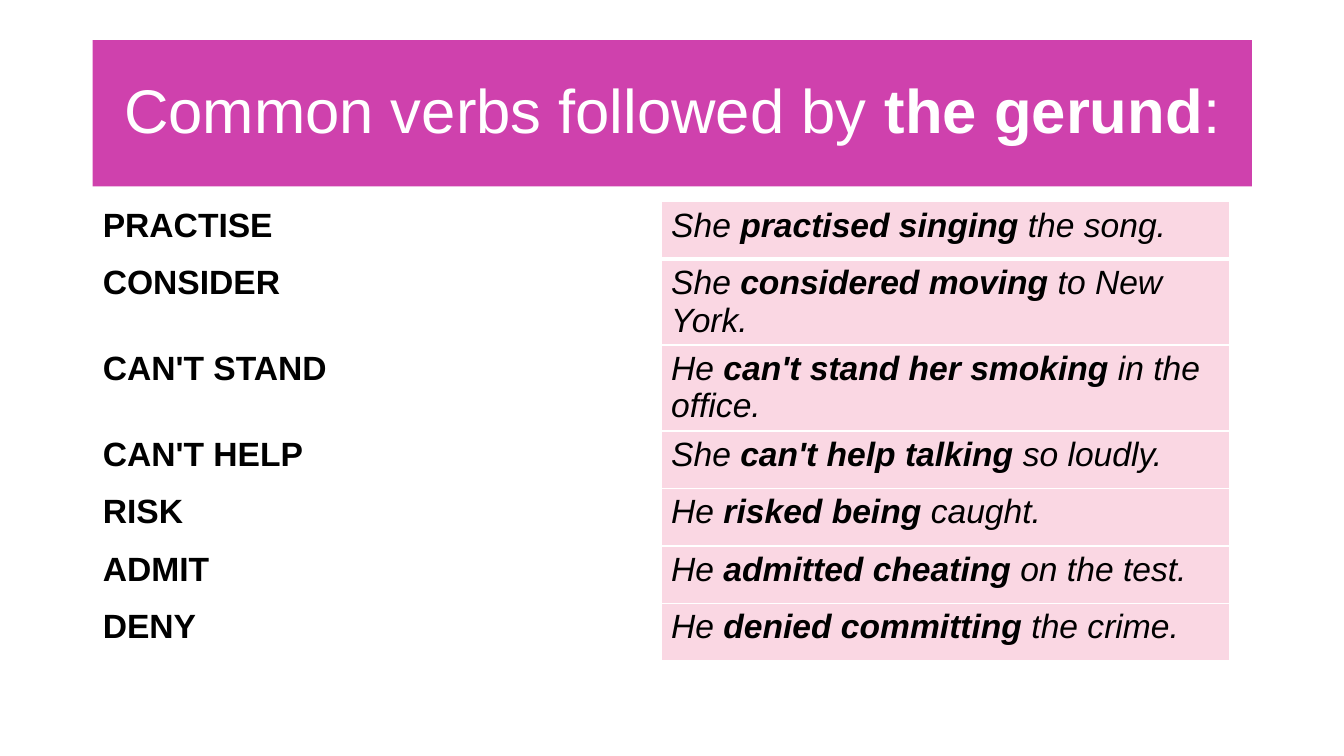
from lxml.etree import SubElement
from pptx import Presentation
from pptx.dml.color import RGBColor
from pptx.enum.shapes import MSO_SHAPE
from pptx.enum.text import MSO_ANCHOR, PP_ALIGN
from pptx.oxml.ns import qn
from pptx.util import Pt

MAGENTA = RGBColor(0xCF, 0x41, 0xAD)
PINK = RGBColor(0xFA, 0xD7, 0xE3)
WHITE = RGBColor(0xFF, 0xFF, 0xFF)
BLACK = RGBColor(0x00, 0x00, 0x00)

LEFT = 66.24
ONE_LINE, TWO_LINES = 41.1, 61.4

VERBS = [
    ("PRACTISE", "She ", "practised singing ", "the song.", ONE_LINE),
    ("CONSIDER", "She ", "considered moving ", "to New York.", TWO_LINES),
    ("CAN'T STAND", "He ", "can't stand her smoking ", "in the office.", TWO_LINES),
    ("CAN'T HELP", "She ", "can't help talking ", "so loudly.", ONE_LINE),
    ("RISK", "He ", "risked being ", "caught.", ONE_LINE),
    ("ADMIT", "He ", "admitted cheating ", "on the test.", ONE_LINE),
    ("DENY", "He ", "denied committing ", "the crime.", ONE_LINE),
]


class GerundSlide:
    """Holds the text style and the slide that receives each element."""

    font_name = "Arial"

    def __init__(self, deck):
        self.slide = deck.slides.add_slide(deck.slide_layouts[6])

    def add_spans(self, paragraph, spans, size, color, italic=False):
        font = paragraph.font
        font.name, font.size, font.italic = self.font_name, Pt(size), italic
        font.color.rgb = color
        for text, bold in spans:
            span = paragraph.add_run()
            span.text = text
            span.font.bold = bold

    def banner(self, left, top, width, height, spans):
        box = self.slide.shapes.add_shape(
            MSO_SHAPE.RECTANGLE, Pt(left), Pt(top), Pt(width), Pt(height))
        box.shadow.inherit = False
        box.fill.solid()
        box.fill.fore_color.rgb = MAGENTA
        box.line.fill.background()
        box.text_frame.word_wrap = True
        box.text_frame.vertical_anchor = MSO_ANCHOR.MIDDLE
        paragraph = box.text_frame.paragraphs[0]
        paragraph.alignment = PP_ALIGN.CENTER
        paragraph.line_spacing = 0.9
        self.add_spans(paragraph, spans, 44, WHITE)

    def cell(self, cell, spans, fill, bottom_border, italic=False):
        properties = cell._tc.get_or_add_tcPr()
        for side, width in (("L", 1), ("R", 1), ("T", 1), ("B", bottom_border)):
            line = SubElement(properties, qn(f"a:ln{side}"), w=str(Pt(width)))
            paint = SubElement(line, qn("a:solidFill"))
            SubElement(paint, qn("a:srgbClr"), val=str(WHITE))
        cell.fill.solid()
        cell.fill.fore_color.rgb = fill
        self.add_spans(cell.text_frame.paragraphs[0], spans, 24, BLACK, italic)

    def verb_table(self, left, top, width, verbs):
        height = sum(verb[-1] for verb in verbs)
        table = self.slide.shapes.add_table(
            len(verbs), 2, Pt(left), Pt(top), Pt(width), Pt(height)).table
        table.first_row = table.horz_banding = False
        for index, (verb, subject, phrase, ending, row_height) in enumerate(verbs):
            table.rows[index].height = Pt(row_height)
            border = 3 if index == 0 else 1
            example = [(subject, False), (phrase, True), (ending, False)]
            self.cell(table.cell(index, 0), [(verb, True)], WHITE, border)
            self.cell(table.cell(index, 1), example, PINK, border, italic=True)


def main():
    deck = Presentation()
    deck.slide_width, deck.slide_height = Pt(960), Pt(540)
    page = GerundSlide(deck)
    page.banner(LEFT, 28.75, 828, 104.4, [
        ("Common verbs followed by ", False), ("the gerund", True), (":", False)])
    page.verb_table(LEFT, 144, 812, VERBS)
    deck.save("out.pptx")


if __name__ == "__main__":
    main()
